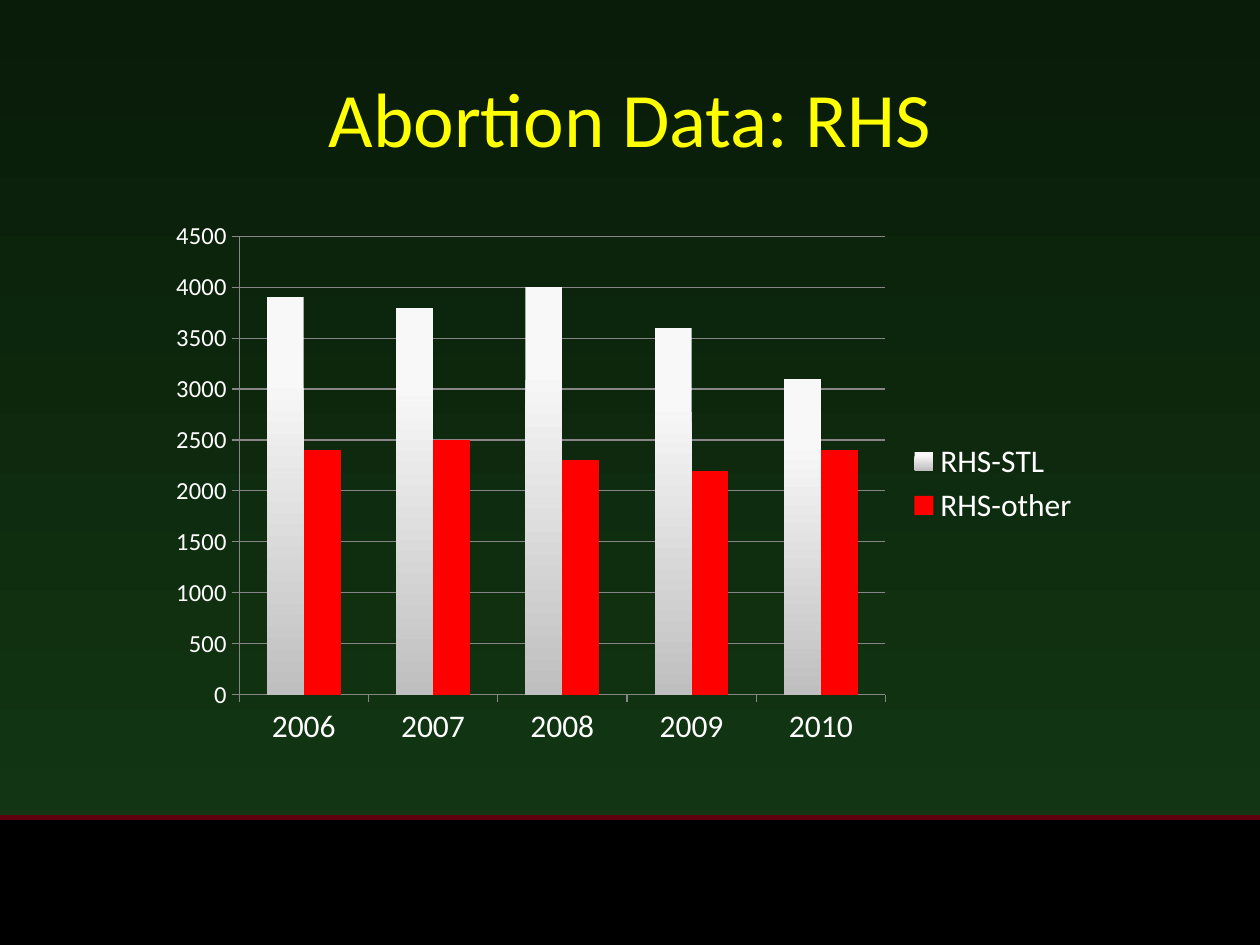
from lxml.etree import SubElement
from pptx import Presentation
from pptx.chart.data import CategoryChartData
from pptx.dml.color import RGBColor
from pptx.enum.chart import XL_CHART_TYPE, XL_LEGEND_POSITION, XL_TICK_MARK
from pptx.enum.shapes import MSO_CONNECTOR, MSO_SHAPE
from pptx.enum.text import MSO_ANCHOR, PP_ALIGN
from pptx.oxml.ns import qn
from pptx.util import Inches, Pt

TITLE = "Abortion Data: RHS"
YEARS = ["2006", "2007", "2008", "2009", "2010"]
SERIES = {
    "RHS-STL": [3900, 3800, 4000, 3600, 3100],
    "RHS-other": [2400, 2500, 2300, 2200, 2400],
}
FONT = "Calibri"
WIDTH, HEIGHT = 10, 7.5
FOOTER_HEIGHT = 1
TITLE_BOX = (0.5, 0.3, 9, 1.25)
CHART_BOX = (1.25, 1.67, 7.42, 4.33)


def color(value):
    return RGBColor.from_string(value)


def inches(box):
    return [Inches(length) for length in box]


def set_font(font, size, value):
    font.name = FONT
    font.size = Pt(size)
    font.color.rgb = color(value)


def set_gradient(fill, start, end, start_position=0):
    fill.gradient()
    fill.gradient_angle = 270
    first, last = fill.gradient_stops
    first.color.rgb, first.position = color(start), start_position
    last.color.rgb, last.position = color(end), 1


def set_line(line, value, width):
    line.color.rgb = color(value)
    line.width = Pt(width)


def add_footer(slide):
    top = HEIGHT - FOOTER_HEIGHT
    band = slide.shapes.add_shape(
        MSO_SHAPE.RECTANGLE, *inches((0, top, WIDTH, FOOTER_HEIGHT)))
    band.shadow.inherit = False
    band.fill.solid()
    band.fill.fore_color.rgb = color("000000")
    band.line.fill.background()
    rule = slide.shapes.add_connector(
        MSO_CONNECTOR.STRAIGHT, *inches((0, top - 0.01, WIDTH, top - 0.01)))
    set_line(rule.line, "5F000F", 3)
    SubElement(rule.element.spPr, qn("a:effectLst"))


def add_title(slide):
    title = slide.shapes.title
    title.left, title.top, title.width, title.height = inches(TITLE_BOX)
    title.text_frame.text = TITLE
    title.text_frame.vertical_anchor = MSO_ANCHOR.MIDDLE
    paragraph = title.text_frame.paragraphs[0]
    paragraph.alignment = PP_ALIGN.CENTER
    set_font(paragraph.font, 44, "FFFF00")


def add_column_chart(slide):
    data = CategoryChartData()
    data.categories = YEARS
    for name, values in SERIES.items():
        data.add_series(name, values)
    chart = slide.shapes.add_chart(
        XL_CHART_TYPE.COLUMN_CLUSTERED, *inches(CHART_BOX), data).chart
    chart.has_title = False
    set_font(chart.font, 10, "FFFFFF")

    plot = chart.plots[0]
    plot.vary_by_categories = False
    plot.gap_width = 150
    plot.overlap = 0
    clinic, other = plot.series
    set_gradient(clinic.format.fill, "F8F8F8", "BFBFBF", 0.2)
    other.format.fill.solid()
    other.format.fill.fore_color.rgb = color("FF0000")

    for axis, size in ((chart.category_axis, 18), (chart.value_axis, 14)):
        axis.major_tick_mark = XL_TICK_MARK.OUTSIDE
        set_font(axis.tick_labels.font, size, "FFFFFF")
        set_line(axis.format.line, "868686", 0.75)
    value_axis = chart.value_axis
    value_axis.minimum_scale, value_axis.maximum_scale = 0, 4500
    value_axis.major_unit = 500
    value_axis.has_major_gridlines = True
    set_line(value_axis.major_gridlines.format.line, "868686", 0.75)

    chart.has_legend = True
    chart.legend.position = XL_LEGEND_POSITION.RIGHT
    chart.legend.include_in_layout = False
    set_font(chart.legend.font, 18, "FFFFFF")


def main():
    presentation = Presentation()
    presentation.slide_width, presentation.slide_height = inches((WIDTH, HEIGHT))
    slide = presentation.slides.add_slide(presentation.slide_layouts[5])
    set_gradient(slide.background.fill, "091B09", "133A14")
    add_footer(slide)
    add_title(slide)
    add_column_chart(slide)
    presentation.save("out.pptx")


if __name__ == "__main__":
    main()
